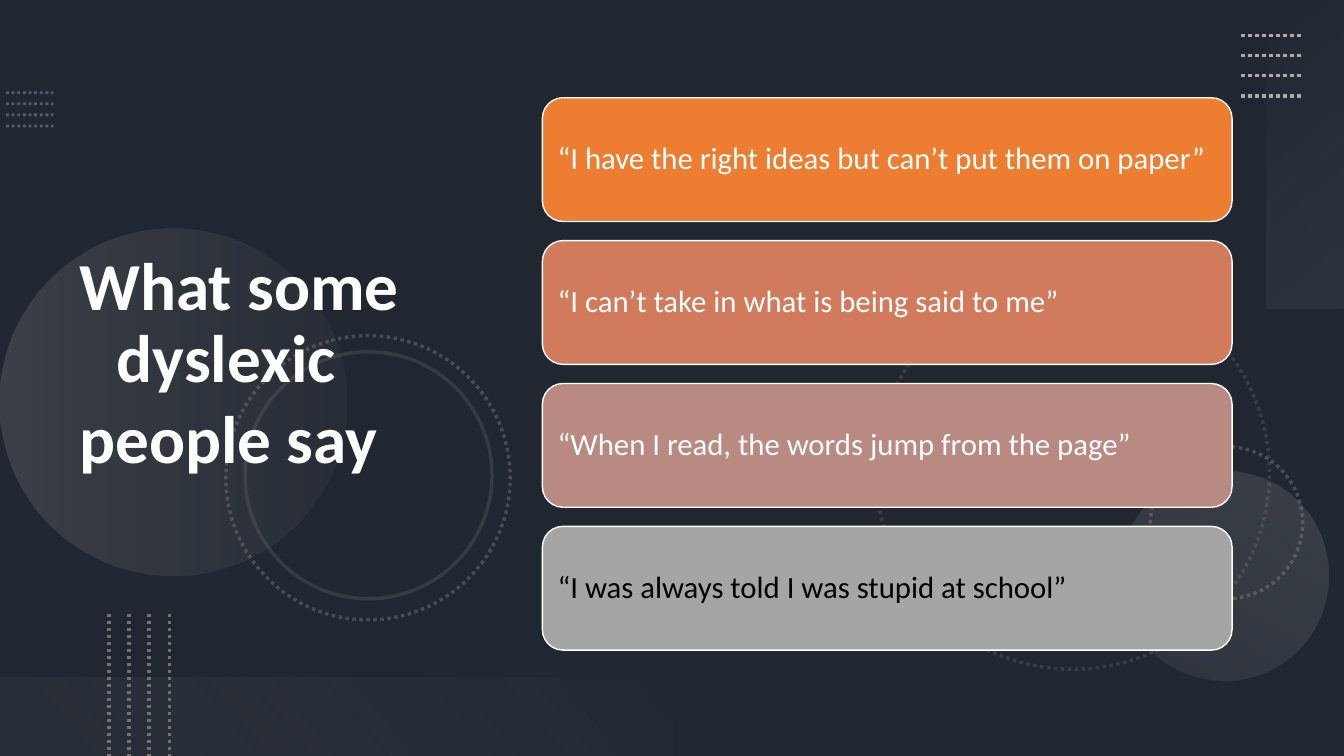
from lxml.etree import SubElement as Sub
from pptx import Presentation
from pptx.dml.color import RGBColor as RGB
from pptx.enum.dml import MSO_LINE as Dash
from pptx.enum.shapes import MSO_CONNECTOR as Link, MSO_SHAPE as Form
from pptx.enum.text import MSO_ANCHOR as Anchor, PP_ALIGN as Align
from pptx.oxml.ns import qn
from pptx.util import Inches as In, Pt

WIDE, HIGH = 13.33, 7.5
BLACK, WHITE = RGB(0, 0, 0), RGB(255, 255, 255)
SLATE, BLUE = RGB(0x44, 0x54, 0x6A), RGB(0x84, 0x97, 0xB0)
ASH, SILVER = RGB(0x76, 0x71, 0x71), RGB(0xAF, 0xAB, 0xAB)
MIST, PALE = RGB(0xF5, 0xF5, 0xF5), RGB(0xF1, 0xF0, 0xF0)
ORANGE, CORAL = RGB(0xED, 0x7D, 0x31), RGB(0xD1, 0x7B, 0x5C)
ROSE, GREY = RGB(0xB9, 0x8A, 0x82), RGB(0xA5, 0xA5, 0xA5)

QUOTES = [
    ("“I have the right ideas but can’t put them on paper”", ORANGE, WHITE),
    ("“I can’t take in what is being said to me”", CORAL, WHITE),
    ("“When I read, the words jump from the page”", ROSE, WHITE),
    ("“I was always told I was stupid at school”", GREY, BLACK),
]


def fade(node, share):
    """Set the opacity, in percent, of each colour under an XML node."""
    for tint in node.iter(qn("a:srgbClr")):
        Sub(tint, qn("a:alpha"), val=str(share * 1000))


def stroke(line, color, width, dotted=True, share=100):
    """Give a line its colour, width, dots and opacity."""
    line.color.rgb = color
    line.width = Pt(width)
    if dotted:
        line.dash_style = Dash.ROUND_DOT
    if share < 100:
        fade(line._ln, share)


def add_form(slide, form, box, turn=0):
    """Add a plain shape without shadow, fill or line."""
    shape = slide.shapes.add_shape(form, *map(In, box))
    shape.shadow.inherit = False
    shape.rotation = turn
    shape.fill.background()
    shape.line.fill.background()
    return shape


def blend(shape, angle, *stops):
    """Fill a shape with two stops of place, colour and opacity."""
    shape.fill.gradient()
    shape.fill.gradient_angle = 360 - angle
    for stop, (place, color, share) in zip(shape.fill.gradient_stops, stops):
        stop.position = place
        stop.color.rgb = color
        fade(stop._gs, share)


def write(frame, text, size, color, bold=False, hang=0, after=0, inset=0.1):
    """Write left-aligned paragraphs in a frame, centred in height."""
    frame.word_wrap = True
    frame.vertical_anchor = Anchor.MIDDLE
    frame.margin_left = frame.margin_right = In(inset)
    frame.text = text
    for para in frame.paragraphs:
        para.alignment = Align.LEFT
        para.line_spacing = 0.9
        para.space_after = Pt(after)
        if hang:
            props = para._p.get_or_add_pPr()
            props.set("marL", str(In(hang)))
            props.set("indent", str(-In(hang)))
        for run in para.runs:
            font = run.font
            font.name, font.size, font.bold = "Calibri", Pt(size), bold
            font.color.rgb = color


def dot_rows(slide, box, color, width=2.5, share=100, upright=False):
    """Spread four dotted lines evenly over a box."""
    left, top, wide, high = box
    for step in range(4):
        if upright:
            x = left + wide * step / 3
            ends = x, top, x, top + high
        else:
            y = top + high * step / 3
            ends = left, y, left + wide, y
        link = slide.shapes.add_connector(Link.STRAIGHT, *map(In, ends))
        stroke(link.line, color, width, share=share)
        Sub(link._element.spPr, qn("a:effectLst"))


def add_ring(slide, left, top, size, turn, share, dotted=True):
    """Add an open circle."""
    ring = add_form(slide, Form.OVAL, (left, top, size, size), turn)
    stroke(ring.line, ASH, 2.5, dotted, share)


def add_disc(slide, left, top, size, turn, *stops):
    """Add a see-through circle."""
    disc = add_form(slide, Form.OVAL, (left, top, size, size), turn)
    blend(disc, 90, *stops)


def add_decor(slide):
    """Draw the backdrop and its dots, circles and bands."""
    shade = add_form(slide, Form.RECTANGLE, (0, 0, WIDE, HIGH))
    shade.fill.solid()
    shade.fill.fore_color.rgb = BLACK
    fade(shade._element.spPr, 53)
    dot_rows(slide, (0.06, 0.92, 0.47, 0.33), BLUE, 2, 50)
    add_ring(slide, 8.69, 2.74, 3.9, 75, 30)
    add_ring(slide, 11.41, 4.43, 1.51, 270, 50)
    add_disc(slide, 0, 2.27, 3.44, 270, (0, SILVER, 20), (1, ASH, 10))
    add_disc(slide, 11.1, 4.67, 2.08, 210, (0, SILVER, 10), (1, SILVER, 20))
    add_ring(slide, 2.24, 3.33, 2.82, 75, 50)
    add_ring(slide, 2.43, 3.49, 2.45, 75, 25, False)
    side = add_form(slide, Form.RECTANGLE, (11.42, 1.14, 3.06, 0.78), 270)
    blend(side, 140, (0, MIST, 0), (1, SILVER, 10))
    dot_rows(slide, (12.31, 0.35, 0.6, 0.6), SILVER)
    base = add_form(slide, Form.RECTANGLE, (0, 6.72, WIDE / 2, 0.78), 180)
    blend(base, 140, (0.1, ASH, 10), (1, PALE, 0))
    dot_rows(slide, (1.08, 6.09, 0.6, 1.41), ASH, upright=True)


def add_title(slide, box):
    """Add the heading."""
    area = slide.shapes.add_textbox(*map(In, box))
    write(area.text_frame, "What some dyslexic\npeople say", 48, WHITE,
          bold=True, hang=0.37, after=6)


def add_cards(slide, box, gap):
    """Stack the quotes as equal cards in a box."""
    left, top, wide, high = box
    tall = (high - gap * (len(QUOTES) - 1)) / len(QUOTES)
    for row, (quote, color, ink) in enumerate(QUOTES):
        spot = left, top + row * (tall + gap), wide, tall
        card = add_form(slide, Form.ROUNDED_RECTANGLE, spot)
        card.fill.solid()
        card.fill.fore_color.rgb = color
        stroke(card.line, WHITE, 1, False)
        write(card.text_frame, quote, 22, ink, inset=0.09)


def main():
    """Build and save the slide."""
    deck = Presentation()
    deck.slide_width, deck.slide_height = In(WIDE), In(HIGH)
    slide = deck.slides.add_slide(deck.slide_layouts[6])
    slide.background.fill.solid()
    slide.background.fill.fore_color.rgb = SLATE
    add_decor(slide)
    add_title(slide, (0.69, 0.54, 4.59, 6.17))
    add_cards(slide, (5.38, 0.97, 6.84, 5.48), 0.19)
    deck.save("out.pptx")


if __name__ == "__main__":
    main()
